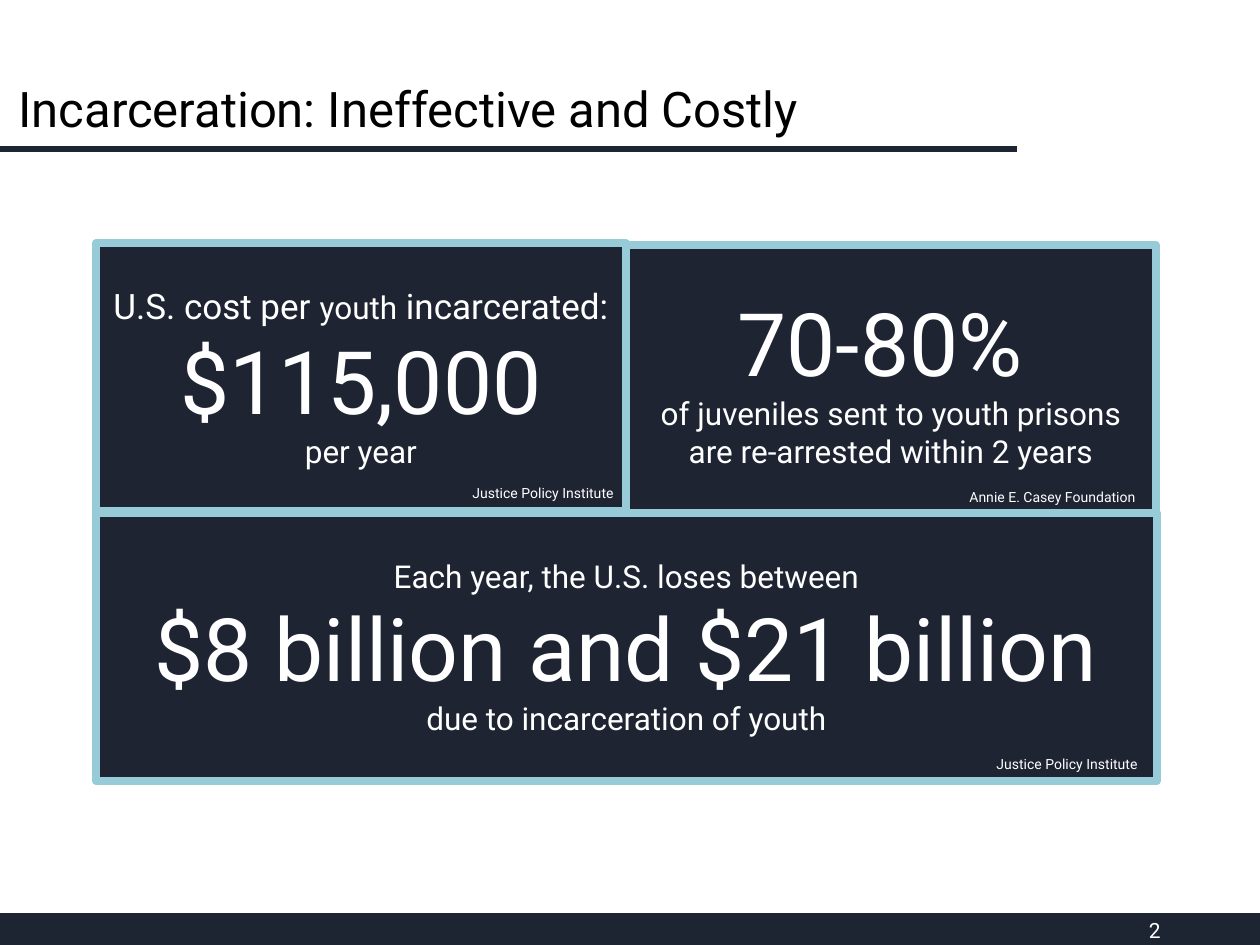
from pptx import Presentation
from pptx.dml.color import RGBColor
from pptx.enum.shapes import MSO_CONNECTOR as Connector, MSO_SHAPE as Shape
from pptx.enum.text import MSO_ANCHOR as Anchor, PP_ALIGN as Align
from pptx.oxml.ns import qn
from pptx.util import Emu, Pt
from lxml.etree import SubElement

TITLE_ONLY = 5
SLIDE_WIDTH, SLIDE_HEIGHT = 1260, 945
CARD_LEFT, CARD_WIDTH, CARD_HEIGHT = 96, 530, 268
LARGE, SMALL = 50, 18


def px(length):
    return Emu(round(length * 914400 / 126))


def color(value):
    return RGBColor.from_string(value)


class SlideBuilder:
    font = "Roboto"
    bar = "1D2432"
    card_fill = "1E2432"
    card_line = "96CBD7"
    black = "000000"
    white = "FFFFFF"

    def __init__(self, slide):
        self.slide = slide

    def style(self, font, size, value):
        font.name = self.font
        font.size = Pt(size)
        font.color.rgb = color(value)

    def title(self, text, left, top, width, height):
        box = self.slide.shapes.title
        box.left, box.top, box.width, box.height = map(px, (left, top, width, height))
        frame = box.text_frame
        frame.text = text
        frame.vertical_anchor = Anchor.MIDDLE
        para = frame.paragraphs[0]
        para.alignment = Align.LEFT
        para.line_spacing = 0.9
        self.style(para.font, 28, self.black)

    def rule(self, left, top, right):
        line = self.slide.shapes.add_connector(
            Connector.STRAIGHT, px(left), px(top), px(right), px(top))
        line.line.color.rgb = color(self.bar)
        line.line.width = Pt(3)
        SubElement(line._element.spPr, qn("a:effectLst"))

    def rectangle(self, left, top, width, height, fill, line, line_width):
        box = self.slide.shapes.add_shape(
            Shape.RECTANGLE, px(left), px(top), px(width), px(height))
        box.shadow.inherit = False
        box.fill.solid()
        box.fill.fore_color.rgb = color(fill)
        box.line.color.rgb = color(line)
        box.line.width = Pt(line_width)
        return box

    def card(self, left, top, width, height, paragraphs):
        """Each paragraph is a list of (text, point size) spans."""
        box = self.rectangle(left, top, width, height, self.card_fill, self.card_line, 4.5)
        frame = box.text_frame
        frame.word_wrap = True
        frame.vertical_anchor = Anchor.MIDDLE
        for index, spans in enumerate(paragraphs):
            para = frame.add_paragraph() if index else frame.paragraphs[0]
            para.alignment = Align.CENTER
            self.style(para.font, spans[0][1], self.white)
            for text, size in spans:
                span = para.add_run()
                span.text = text
                if len(spans) > 1:
                    span.font.size = Pt(size)

    def label(self, text, left, top, width, height, size=8,
              align=Align.LEFT, anchor=Anchor.TOP):
        box = self.slide.shapes.add_textbox(px(left), px(top), px(width), px(height))
        frame = box.text_frame
        frame.word_wrap = True
        frame.vertical_anchor = anchor
        para = frame.paragraphs[0]
        para.text = text
        para.alignment = align
        self.style(para.font, size, self.white)


def main():
    deck = Presentation()
    deck.slide_width, deck.slide_height = px(SLIDE_WIDTH), px(SLIDE_HEIGHT)
    page = SlideBuilder(deck.slides.add_slide(deck.slide_layouts[TITLE_ONLY]))

    page.rule(0, 149, 1017)
    page.rectangle(0, 914, SLIDE_WIDTH, 31, page.bar, page.bar, 1)
    page.title("Incarceration: Ineffective and Costly", 6, 62, 978, 100)

    page.card(CARD_LEFT, 243, CARD_WIDTH, CARD_HEIGHT, [
        [("U.S. cost per ", 20), ("youth", SMALL), (" incarcerated:", 20)],
        [("$115,000", LARGE)],
        [("per year", SMALL)],
    ])
    page.card(CARD_LEFT + CARD_WIDTH, 245, CARD_WIDTH, CARD_HEIGHT, [
        [("70-80% ", LARGE)],
        [("of juveniles sent to youth prisons are re-arrested within 2 years", SMALL)],
    ])
    page.card(CARD_LEFT, 513, 2 * CARD_WIDTH + 1, CARD_HEIGHT, [
        [("Each year, the U.S. loses between", SMALL)],
        [("$8 billion and $21 billion", LARGE)],
        [("due to incarceration of youth", SMALL)],
    ])

    for credit, left, top, width in [
        ("Justice Policy Institute", 460, 478, 204),
        ("Annie E. Casey Foundation", 957, 482, 238),
        ("Justice Policy Institute", 984, 749, 204),
    ]:
        page.label(credit, left, top, width, 30)
    page.label("2", 890, 905, 283, 50, 12, Align.RIGHT, Anchor.MIDDLE)

    deck.save("out.pptx")


if __name__ == "__main__":
    main()
